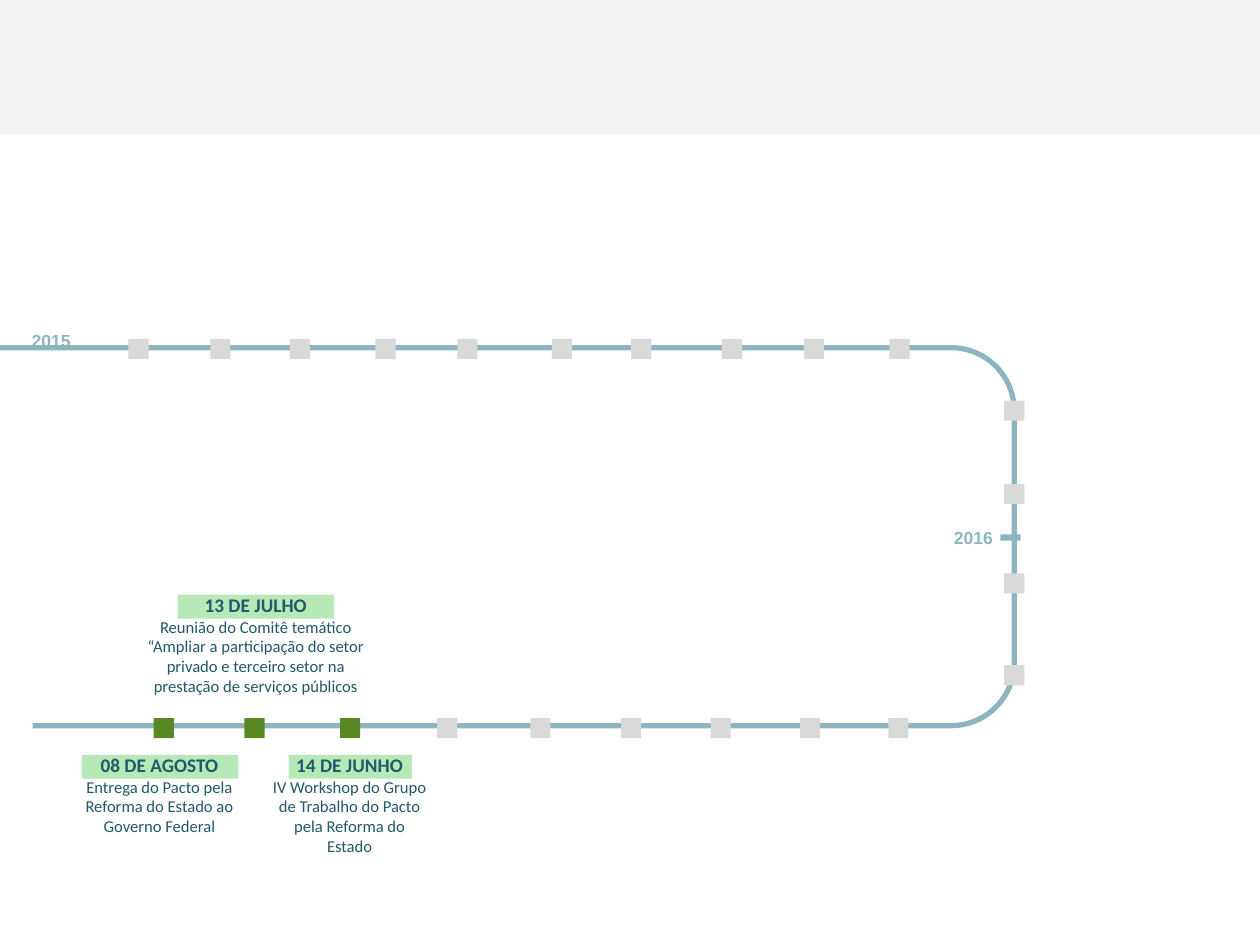
from dataclasses import dataclass

from pptx import Presentation
from pptx import util as u
from pptx.dml.color import RGBColor
from pptx.enum import shapes as sh, text as tx

PX = 9144


@dataclass(frozen=True)
class Theme:
    band: str = "F2F2F2"
    line: str = "8DB5C1"
    past: str = "D9D9D9"
    now: str = "588824"
    tag: str = "B7E9B8"
    ink: str = "215968"
    white: str = "FFFFFF"
    year_pt: float = 10
    date_pt: float = 11
    body_pt: float = 9.5
    line_pt: float = 3


@dataclass(frozen=True)
class Box:
    x: int
    y: int
    w: int
    h: int

    def emu(self) -> list[u.Emu]:
        return [u.Emu(v * PX) for v in (self.x, self.y, self.w, self.h)]


@dataclass(frozen=True)
class Para:
    text: str
    size: float
    color: str
    face: str = "Calibri"
    bold: bool = False


@dataclass(frozen=True)
class Event:
    date: str
    body: str
    tag: Box
    box: Box
    mark: int


T = Theme()
MARK = 16
TOP, LOW, SIDE = 269, 570, 797
TOP_X = (102, 167, 230, 298, 363, 438, 501, 573, 638, 706)
SIDE_Y = (318, 384, 455, 528)
LOW_X = (347, 421, 493, 564, 635, 705)
YEARS = (("2016", Box(745, 413, 55, 27)), ("2015", Box(13, 257, 55, 27)))
EVENTS = (
    Event("14 DE JUNHO",
          "IV Workshop do Grupo de Trabalho do Pacto pela Reforma do Estado",
          Box(229, 599, 98, 19), Box(206, 593, 143, 93), 270),
    Event("13 DE JULHO",
          "Reunião do Comitê temático “Ampliar a participação do setor privado "
          "e terceiro setor na prestação de serviços públicos",
          Box(141, 472, 124, 19), Box(106, 466, 194, 93), 194),
    Event("08 DE AGOSTO",
          "Entrega do Pacto pela Reforma do Estado ao Governo Federal",
          Box(65, 599, 124, 19), Box(47, 593, 159, 77), 122),
)


def block(slide, box: Box, color: str) -> None:
    shape = slide.shapes.add_shape(sh.MSO_SHAPE.RECTANGLE, *box.emu())
    shape.shadow.inherit = False
    shape.fill.solid()
    shape.fill.fore_color.rgb = RGBColor.from_string(color)
    shape.line.fill.background()


def mark(slide, x: int, y: int, color: str) -> None:
    block(slide, Box(x, y, MARK, MARK), color)


def track(slide, box: Box) -> None:
    shape = slide.shapes.add_shape(sh.MSO_SHAPE.ROUNDED_RECTANGLE, *box.emu())
    shape.shadow.inherit = False
    shape.fill.background()
    shape.line.color.rgb = RGBColor.from_string(T.line)
    shape.line.width = u.Pt(T.line_pt)


def write(slide, box: Box, *paras: Para) -> None:
    frame = slide.shapes.add_textbox(*box.emu()).text_frame
    frame.word_wrap = True
    frame.auto_size = tx.MSO_AUTO_SIZE.SHAPE_TO_FIT_TEXT
    for i, para in enumerate(paras):
        p = frame.add_paragraph() if i else frame.paragraphs[0]
        p.text = para.text
        p.alignment = tx.PP_ALIGN.CENTER
        p.font.name = para.face
        p.font.size = u.Pt(para.size)
        p.font.bold = para.bold
        p.font.color.rgb = RGBColor.from_string(para.color)


def draw(slide) -> None:
    block(slide, Box(0, 0, 1000, 107), T.band)
    track(slide, Box(-59, 276, 864, 300))
    spots = [(x, TOP) for x in TOP_X]
    spots += [(SIDE, y) for y in SIDE_Y]
    spots += [(x, LOW) for x in LOW_X]
    for x, y in spots:
        mark(slide, x, y, T.past)
    block(slide, Box(-75, 565, 101, 21), T.white)
    block(slide, Box(794, 424, 16, 5), T.line)
    for year, box in YEARS:
        write(slide, box, Para(year, T.year_pt, T.line, "Arial", True))
    for e in EVENTS:
        block(slide, e.tag, T.tag)
        write(slide, e.box,
              Para(e.date, T.date_pt, T.ink, bold=True),
              Para(e.body, T.body_pt, T.ink))
        mark(slide, e.mark, LOW, T.now)


def main() -> None:
    deck = Presentation()
    deck.slide_width, deck.slide_height = u.Emu(1000 * PX), u.Emu(750 * PX)
    draw(deck.slides.add_slide(deck.slide_layouts[6]))
    deck.save("out.pptx")


if __name__ == "__main__":
    main()
